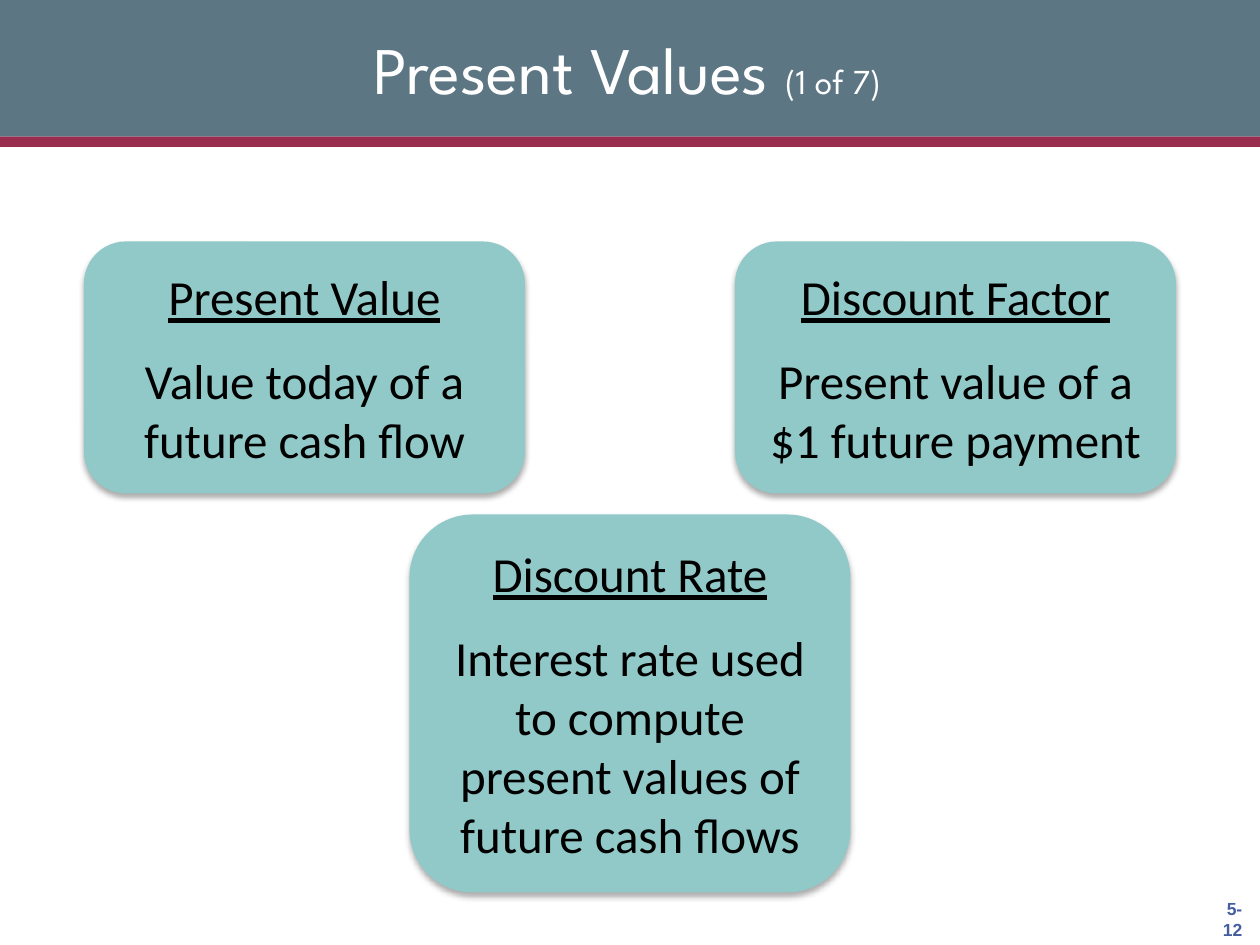
from lxml.etree import SubElement
from pptx import Presentation
from pptx.dml.color import RGBColor
from pptx.enum.shapes import MSO_SHAPE
from pptx.enum.text import MSO_ANCHOR, MSO_AUTO_SIZE, PP_ALIGN
from pptx.oxml.ns import qn
from pptx.util import Pt

HUES = {"slate": "5C7683", "wine": "992D4F", "teal": "91C9C8",
        "white": "FFFFFF", "black": "000000", "blue": "455EA0"}
HEAD = {"name": "League Spartan", "size": Pt(38)}
COUNT = {**HEAD, "size": Pt(20)}
BODY = {"name": "Calibri", "size": Pt(28), "underline": False}
TERM = {**BODY, "underline": True}
PAGE = {"name": "Arial", "size": Pt(10), "bold": True}
WIDE, HIGH = 720, 540


def hue(name):
    return RGBColor.from_string(HUES[name])


def put(obj, values):
    for key, value in values.items():
        setattr(obj, key, value)


def write(para, text, style, color, align):
    para.alignment = align
    run = para.add_run()
    run.text = text
    put(run.font, style)
    run.font.color.rgb = hue(color)


def block(slide, kind, box, color):
    shape = slide.shapes.add_shape(kind, *map(Pt, box))
    shape.shadow.inherit = False
    shape.fill.solid()
    shape.fill.fore_color.rgb = hue(color)
    shape.line.fill.background()
    return shape


def shade(shape):
    # Soft shadow straight below
    effects = shape.element.spPr.find(qn("a:effectLst"))
    outer = SubElement(effects, qn("a:outerShdw"), blurRad=str(Pt(3.5)),
                       dist=str(Pt(2.2)), dir="5400000", rotWithShape="0")
    black = SubElement(outer, qn("a:srgbClr"), val=HUES["black"])
    SubElement(black, qn("a:alpha"), val="32000")


def banner(slide, box, text, count):
    left, top, width, height = box
    title = slide.shapes.title
    # Bands lie behind the title
    for band, color in (((left, top + height, width, 6), "wine"),
                        (box, "slate")):
        bar = block(slide, MSO_SHAPE.RECTANGLE, band, color)
        title.element.addprevious(bar.element)
    put(title, {"left": Pt(left + 18), "top": Pt(top + 6),
                "width": Pt(width - 39), "height": Pt(height - 12)})
    frame = title.text_frame
    put(frame, {"vertical_anchor": MSO_ANCHOR.MIDDLE, "word_wrap": True,
                "auto_size": MSO_AUTO_SIZE.NONE})
    para = frame.paragraphs[0]
    write(para, text, HEAD, "white", PP_ALIGN.CENTER)
    write(para, count, COUNT, "white", PP_ALIGN.CENTER)


def card(slide, box, term, meaning):
    shape = block(slide, MSO_SHAPE.ROUNDED_RECTANGLE, box, "teal")
    shade(shape)
    frame = shape.text_frame
    put(frame, {"vertical_anchor": MSO_ANCHOR.MIDDLE, "word_wrap": True})
    write(frame.paragraphs[0], term, TERM, "black", PP_ALIGN.CENTER)
    para = frame.add_paragraph()
    para.space_before = Pt(14.5)
    write(para, meaning, BODY, "black", PP_ALIGN.CENTER)


def cards(slide, box):
    left, top, width, height = box
    wide, short, tall = 252, 144, 216
    right = left + width - wide
    middle = left + (width - wide) / 2
    low = top + height - tall
    card(slide, (middle, low, wide, tall), "Discount Rate",
         "Interest rate used to compute present values of future cash flows")
    card(slide, (left, top, wide, short), "Present Value",
         "Value today of a future cash flow")
    card(slide, (right, top, wide, short), "Discount Factor",
         "Present value of a $1 future payment")


def footer(slide, box, text):
    frame = slide.shapes.add_textbox(*map(Pt, box)).text_frame
    put(frame, {"vertical_anchor": MSO_ANCHOR.MIDDLE, "word_wrap": False})
    write(frame.paragraphs[0], text, PAGE, "blue", PP_ALIGN.RIGHT)


def main():
    deck = Presentation()
    put(deck, {"slide_width": Pt(WIDE), "slide_height": Pt(HIGH)})
    slide = deck.slides.add_slide(deck.slide_layouts[5])
    banner(slide, (0, 0, WIDE, 78), "Present Values ", "(1 of 7)")
    cards(slide, (48, 138, WIDE - 96, 372))
    footer(slide, (681, 510, 36, 30), "5- 12")
    deck.save("out.pptx")


if __name__ == "__main__":
    main()
